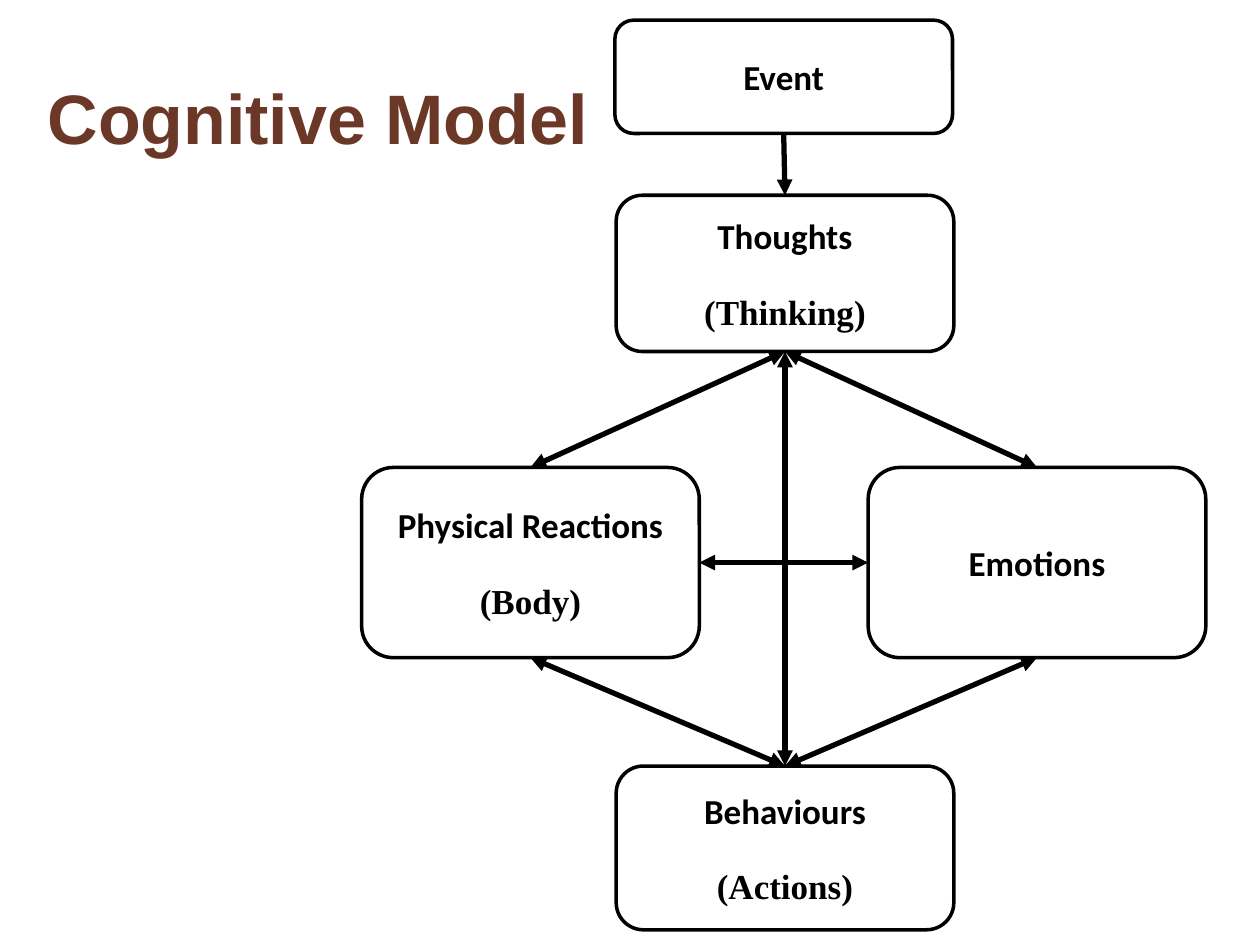
from lxml import etree
from pptx import Presentation
from pptx.dml.color import RGBColor
from pptx.enum.shapes import MSO_CONNECTOR, MSO_SHAPE
from pptx.enum.text import MSO_ANCHOR, PP_ALIGN
from pptx.oxml.ns import qn
from pptx.util import Inches, Pt

ROUNDED = MSO_SHAPE.ROUNDED_RECTANGLE
STRAIGHT = MSO_CONNECTOR.STRAIGHT
MIDDLE = MSO_ANCHOR.MIDDLE
CENTER = PP_ALIGN.CENTER
TOP, LEFT, BOTTOM, RIGHT = range(4)

THEME = {
    "title": ("Arial", 40, RGBColor(0x6B, 0x37, 0x27)),
    "label": ("Calibri", 20, RGBColor(0, 0, 0)),
    "note": ("Times New Roman", 20, RGBColor(0, 0, 0)),
    "line": RGBColor(0, 0, 0),
    "box_line": 2,
    "arrow_line": 3,
    "note_gap": 19.2,
}

# Content: box name -> (left, top, height, label, note)
TITLE = "Cognitive Model"
BOX_WIDTH = 2.68
BOXES = {
    "event": (4.88, 0.16, 0.9, "Event", None),
    "thoughts": (4.89, 1.55, 1.24, "Thoughts", "(Thinking)"),
    "emotions": (6.89, 3.71, 1.51, "Emotions", None),
    "body": (2.87, 3.71, 1.51, "Physical Reactions", "(Body)"),
    "behaviours": (4.89, 6.08, 1.3, "Behaviours", "(Actions)"),
}
# (from box, side, to box, side, arrowheads)
ARROWS = [
    ("event", BOTTOM, "thoughts", TOP, ["tailEnd"]),
    ("thoughts", BOTTOM, "emotions", TOP, ["headEnd", "tailEnd"]),
    ("emotions", BOTTOM, "behaviours", TOP, ["headEnd", "tailEnd"]),
    ("body", BOTTOM, "behaviours", TOP, ["headEnd", "tailEnd"]),
    ("thoughts", BOTTOM, "body", TOP, ["headEnd", "tailEnd"]),
    ("thoughts", BOTTOM, "behaviours", TOP, ["headEnd", "tailEnd"]),
    ("body", RIGHT, "emotions", LEFT, ["headEnd", "tailEnd"]),
]


def add_run(paragraph, text, style):
    run = paragraph.add_run()
    run.text = text
    name, size, color = THEME[style]
    run.font.name = name
    run.font.size = Pt(size)
    run.font.bold = True
    run.font.color.rgb = color


def set_line(line, width):
    line.color.rgb = THEME["line"]
    line.width = Pt(width)


def add_title(slide):
    box = slide.shapes.add_textbox(Inches(0.28), Inches(0.3), Inches(9), Inches(1.25))
    frame = box.text_frame
    frame.word_wrap = True
    frame.vertical_anchor = MIDDLE
    add_run(frame.paragraphs[0], TITLE, "title")


def add_box(slide, left, top, height, label, note):
    shape = slide.shapes.add_shape(
        ROUNDED, Inches(left), Inches(top), Inches(BOX_WIDTH), Inches(height))
    shape.shadow.inherit = False
    shape.fill.background()
    set_line(shape.line, THEME["box_line"])
    frame = shape.text_frame
    frame.word_wrap = True
    frame.vertical_anchor = MIDDLE
    paragraph = frame.paragraphs[0]
    paragraph.alignment = CENTER
    add_run(paragraph, label, "label")
    if note:
        paragraph = frame.add_paragraph()
        paragraph.alignment = CENTER
        paragraph.space_before = Pt(THEME["note_gap"])
        add_run(paragraph, note, "note")
    return shape


def add_arrow(slide, start, start_side, end, end_side, heads):
    connector = slide.shapes.add_connector(STRAIGHT, 0, 0, 0, 0)
    connector.begin_connect(start, start_side)
    connector.end_connect(end, end_side)
    set_line(connector.line, THEME["arrow_line"])
    properties = connector._element.spPr
    for head in heads:
        etree.SubElement(properties.find(qn("a:ln")), qn("a:" + head), type="triangle")
    etree.SubElement(properties, qn("a:effectLst"))


def main():
    presentation = Presentation()
    presentation.slide_width = Inches(10)
    presentation.slide_height = Inches(7.5)
    slide = presentation.slides.add_slide(presentation.slide_layouts[6])

    add_title(slide)
    shapes = {name: add_box(slide, *box) for name, box in BOXES.items()}
    for start, start_side, end, end_side, heads in ARROWS:
        add_arrow(slide, shapes[start], start_side, shapes[end], end_side, heads)

    presentation.save("out.pptx")


if __name__ == "__main__":
    main()
